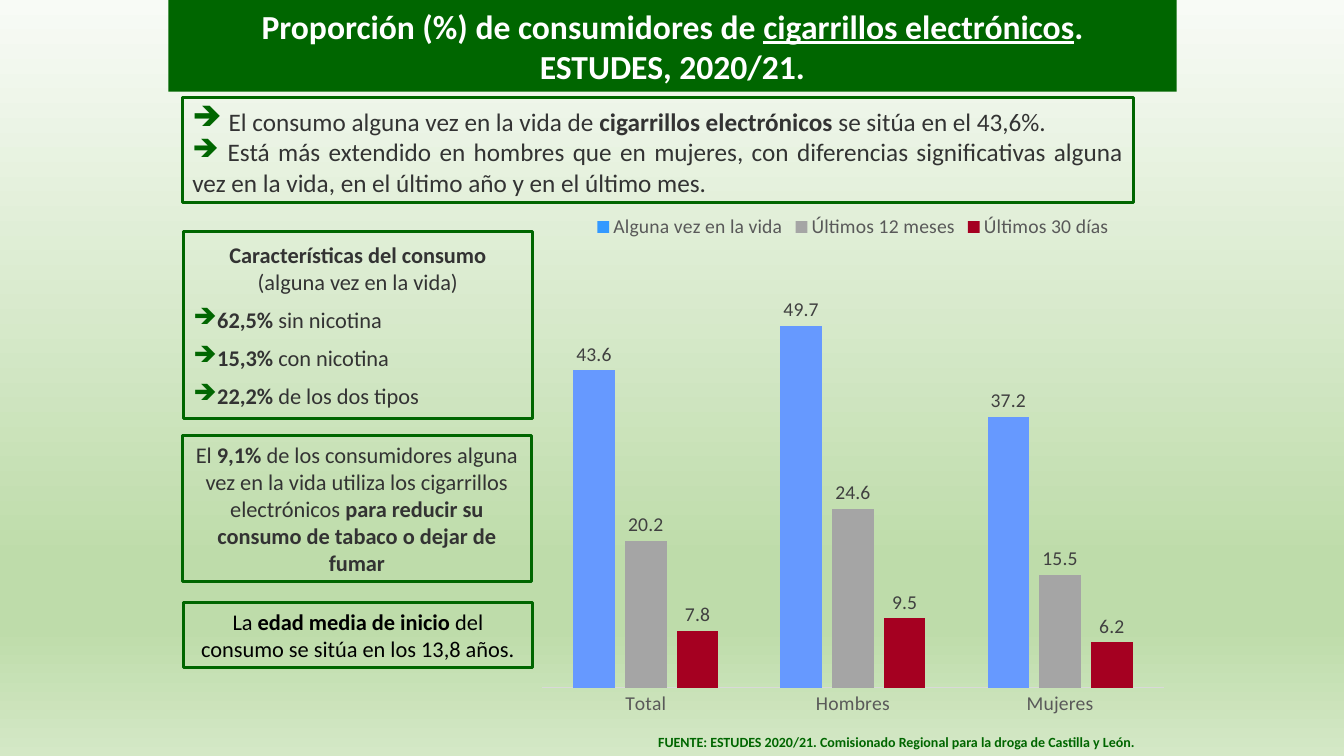
"""Builds the slide on electronic cigarette use, ESTUDES 2020/21."""
import lxml.etree
import pptx
import pptx.chart.data
import pptx.dml.color
import pptx.enum.chart
import pptx.enum.shapes
import pptx.enum.text
import pptx.oxml.ns
import pptx.util

PX = 9144
FONT = "Calibri"
COLORS = {
    "green": "006600", "white": "FFFFFF", "text": "333333", "black": "000000",
    "legend": "595959", "label": "404040", "axis": "D9D9D9",
    "blue": "3399FF", "bar blue": "6699FF", "gray": "A5A5A5", "red": "A50021",
}
BACKGROUND = [(0, "F8FBF6"), (74, "BEDCAA"), (83, "BEDCAA"), (100, "D4E8C6")]
ALIGN = pptx.enum.text.PP_ALIGN

# Each paragraph: alignment, bullet, space before, runs of (text, style, size).
TITLE = [
    (ALIGN.CENTER, False, 0, [("Proporción (%) de consumidores de ", "b", 24),
                              ("cigarrillos electrónicos", "bu", 24), (".", "b", 24)]),
    (ALIGN.CENTER, False, 0, [("ESTUDES, 2020/21.", "b", 24)]),
]
SOURCE = [(ALIGN.LEFT, False, 0, [
    ("FUENTE: ESTUDES 2020/21. Comisionado Regional para la droga de Castilla y León.", "b", 10)])]
TRAITS = [
    (ALIGN.CENTER, False, 0, [("Características del consumo", "b", 16)]),
    (ALIGN.CENTER, False, 0, [("(alguna vez en la vida)", "", 16)]),
] + [
    (ALIGN.LEFT, True, 8, [(share, "b", 16), (kind, "", 16)])
    for share, kind in [("62,5%", " sin nicotina"), ("15,3%", " con nicotina"),
                        ("22,2%", " de los dos tipos")]
]
SUMMARY = [
    (ALIGN.JUSTIFY, True, 0, [(" ", "", 20), ("El consumo alguna vez en la vida de ", "", 18),
                              ("cigarrillos electrónicos", "b", 18),
                              (" se sitúa en el 43,6%.", "", 18)]),
    (ALIGN.JUSTIFY, True, 0, [
        (" Está más extendido en hombres que en mujeres, con diferencias significativas "
         "alguna vez en la vida, en el último año y en el último mes.", "", 18)]),
]
QUITTING = [(ALIGN.CENTER, False, 0, [
    ("El ", "", 16), ("9,1%", "b", 16),
    (" de los consumidores alguna vez en la vida utiliza los cigarrillos electrónicos ", "", 16),
    ("para reducir su consumo de tabaco o dejar de fumar", "b", 16)])]
START_AGE = [(ALIGN.CENTER, False, 0, [
    ("La ", "", 16), ("edad media de inicio ", "b", 16),
    ("del consumo se sitúa en los 13,8 años.", "", 16)])]

BOXES = [
    ((182, 230, 346, 185), TRAITS, "text"),
    ((181, 97, 943, 104), SUMMARY, "text"),
    ((181, 432, 346, 145), QUITTING, "text"),
    ((182, 598, 346, 64), START_AGE, "black"),
]
CHART_AREA = (525, 202, 642, 522)
PLOT_AREA = {"x": 0.02, "y": 0.09, "w": 0.96, "h": 0.83}
CATEGORIES = ["Total", "Hombres", "Mujeres"]
SERIES = [
    ("Alguna vez en la vida", (43.6, 49.7, 37.2), "blue"),
    ("Últimos 12 meses", (20.2, 24.6, 15.5), "gray"),
    ("Últimos 30 días", (7.8, 9.5, 6.2), "red"),
]


def rgb(name):
    return pptx.dml.color.RGBColor.from_string(COLORS[name])


def emu(area):
    return [length * PX for length in area]


def child(parent, tag, **attributes):
    return lxml.etree.SubElement(parent, pptx.oxml.ns.qn(tag), attributes)


def set_font(font, size, color):
    font.name = FONT
    font.size = pptx.util.Pt(size)
    font.color.rgb = rgb(color)


def paint_background(slide):
    fill = slide.background.fill
    fill.gradient()
    fill.gradient_angle = 270
    stops = next(slide.element.iter(pptx.oxml.ns.qn("a:gsLst")))
    for stop in list(stops):
        stops.remove(stop)
    for percent, color in BACKGROUND:
        child(child(stops, "a:gs", pos=str(percent * 1000)), "a:srgbClr", val=color)


def write(shape, paragraphs, color):
    frame = shape.text_frame
    frame.word_wrap = True
    for index, (alignment, bullet, space, runs) in enumerate(paragraphs):
        paragraph = frame.add_paragraph() if index else frame.paragraphs[0]
        paragraph.alignment = alignment
        if space:
            paragraph.space_before = pptx.util.Pt(space)
        if bullet:
            properties = paragraph._p.get_or_add_pPr()
            child(child(properties, "a:buClr"), "a:srgbClr", val=COLORS["green"])
            child(properties, "a:buChar", char="➔")
        for text, style, size in runs:
            run = paragraph.add_run()
            run.text = text
            set_font(run.font, size, color)
            run.font.bold = "b" in style
            run.font.underline = "u" in style


def add_box(slide, area, paragraphs, color, filled=False):
    shape = slide.shapes.add_shape(pptx.enum.shapes.MSO_SHAPE.RECTANGLE, *emu(area))
    shape.shadow.inherit = False
    if filled:
        shape.fill.solid()
        shape.fill.fore_color.rgb = rgb("green")
        shape.line.fill.background()
    else:
        shape.fill.background()
        shape.line.color.rgb = rgb("green")
        shape.line.width = pptx.util.Pt(2)
    shape.text_frame.vertical_anchor = pptx.enum.text.MSO_ANCHOR.MIDDLE
    write(shape, paragraphs, color)


def place_plot(chart):
    plot_area = next(chart.element.iter(pptx.oxml.ns.qn("c:plotArea")))
    for old in plot_area.findall(pptx.oxml.ns.qn("c:layout")):
        plot_area.remove(old)
    layout = child(plot_area, "c:layout")
    plot_area.insert(0, layout)
    manual = child(layout, "c:manualLayout")
    child(manual, "c:layoutTarget", val="inner")
    for side in "xy":
        child(manual, f"c:{side}Mode", val="edge")
    for side, share in PLOT_AREA.items():
        child(manual, f"c:{side}", val=str(share))


def add_usage_chart(slide):
    enum = pptx.enum.chart
    data = pptx.chart.data.CategoryChartData(number_format="#,##0.0")
    data.categories = CATEGORIES
    for name, values, _ in SERIES:
        data.add_series(name, values)
    chart = slide.shapes.add_chart(
        enum.XL_CHART_TYPE.COLUMN_CLUSTERED, *emu(CHART_AREA), data).chart
    set_font(chart.font, 10, "black")
    chart.has_title = False
    chart.has_legend = True
    chart.legend.position = enum.XL_LEGEND_POSITION.TOP
    chart.legend.include_in_layout = False
    set_font(chart.legend.font, 14, "legend")

    axis = chart.category_axis
    axis.major_tick_mark = enum.XL_TICK_MARK.NONE
    axis.format.line.color.rgb = rgb("axis")
    axis.format.line.width = pptx.util.Pt(0.75)
    set_font(axis.tick_labels.font, 14, "legend")
    values_axis = chart.value_axis
    values_axis.visible = False
    values_axis.has_major_gridlines = False
    values_axis.minimum_scale, values_axis.maximum_scale = 0, 60

    plot = chart.plots[0]
    plot.gap_width, plot.overlap = 150, -25
    plot.vary_by_categories = False
    for series, (_, _, color) in zip(plot.series, SERIES):
        series.format.fill.solid()
        series.format.fill.fore_color.rgb = rgb(color)
        labels = series.data_labels
        labels.show_value = True
        labels.number_format = "#,##0.0"
        labels.number_format_is_linked = False
        labels.position = enum.XL_LABEL_POSITION.OUTSIDE_END
        set_font(labels.font, 14, "label")
    for index in range(len(CATEGORIES)):
        fill = plot.series[0].points[index].format.fill
        fill.solid()
        fill.fore_color.rgb = rgb("bar blue")
    place_plot(chart)


def main():
    presentation = pptx.Presentation()
    presentation.slide_width, presentation.slide_height = emu((1333, 750))
    slide = presentation.slides.add_slide(presentation.slide_layouts[6])
    paint_background(slide)
    add_box(slide, (167, 0, 1000, 91), TITLE, "white", filled=True)
    write(slide.shapes.add_textbox(*emu((643, 723, 524, 27))), SOURCE, "green")
    add_usage_chart(slide)
    for area, paragraphs, color in BOXES:
        add_box(slide, area, paragraphs, color)
    presentation.save("out.pptx")


if __name__ == "__main__":
    main()
